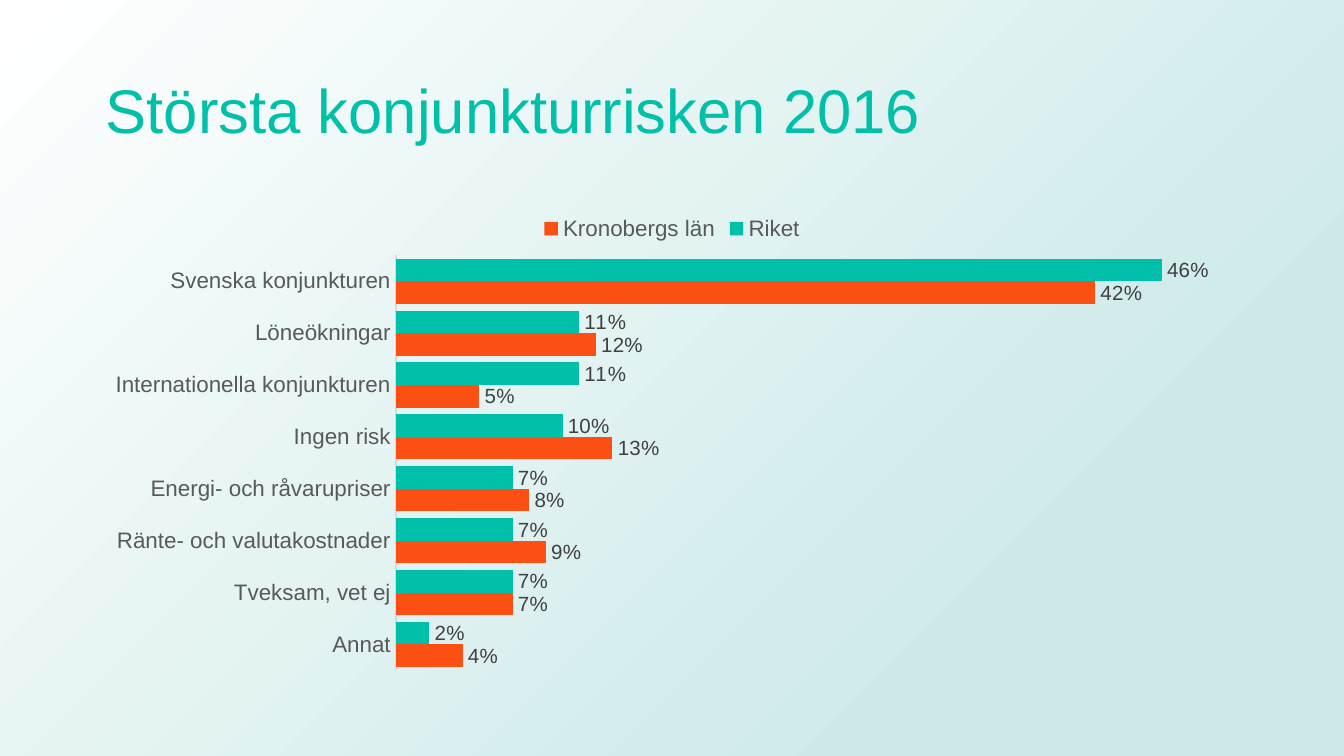
from pptx import Presentation
from pptx.chart.data import CategoryChartData
from pptx.dml.color import RGBColor
from pptx.enum.chart import XL_CHART_TYPE as Chart, XL_LABEL_POSITION as LabelPos
from pptx.enum.chart import XL_LEGEND_POSITION as LegendPos, XL_TICK_MARK as Tick
from pptx.enum.shapes import MSO_SHAPE as Shape
from pptx.enum.text import MSO_ANCHOR as Anchor, MSO_AUTO_SIZE as AutoSize, PP_ALIGN as Align
from pptx.oxml import parse_xml
from pptx.util import Inches, Pt

THEME = {
    "font": "Arial",
    "teal": "00C0A9", "orange": "FB4F14", "axis_text": "595959",
    "label_text": "404040", "axis_line": "D9D9D9",
    "glow": "CDEAE9", "paper": "FFFFFF",
    "title": 33, "axis": 12, "label": 11,
}
A_NS = "http://schemas.openxmlformats.org/drawingml/2006/main"

RISKS = [
    # category, Riket, Kronobergs län
    ("Svenska konjunkturen", 0.46, 0.42),
    ("Löneökningar", 0.11, 0.12),
    ("Internationella konjunkturen", 0.11, 0.05),
    ("Ingen risk", 0.10, 0.13),
    ("Energi- och råvarupriser", 0.07, 0.08),
    ("Ränte- och valutakostnader", 0.07, 0.09),
    ("Tveksam, vet ej", 0.07, 0.07),
    ("Annat", 0.02, 0.04),
]
SERIES = [("Riket", "teal"), ("Kronobergs län", "orange")]


def style_font(font, size, color):
    font.name = THEME["font"]
    font.size = Pt(THEME[size])
    font.color.rgb = RGBColor.from_string(THEME[color])


prs = Presentation()
W = Inches(10)
H = W * 9 // 16
prs.slide_width, prs.slide_height = W, H
left = W * 11 // 160
width = W - 2 * left
s = prs.slides.add_slide(prs.slide_layouts[5])

# Backdrop on the master: a glow that spreads from the bottom right corner
backdrop = s.shapes.add_shape(Shape.RECTANGLE, 0, 0, W, H)
backdrop.shadow.inherit = False
backdrop.line.fill.background()
backdrop.fill.background()
no_fill = backdrop._element.spPr.find(f"{{{A_NS}}}noFill")
no_fill.getparent().replace(no_fill, parse_xml(
    f'<a:gradFill xmlns:a="{A_NS}" rotWithShape="1"><a:gsLst>'
    f'<a:gs pos="23000"><a:srgbClr val="{THEME["glow"]}"/></a:gs>'
    f'<a:gs pos="100000"><a:srgbClr val="{THEME["paper"]}"/></a:gs></a:gsLst>'
    '<a:path path="circle"><a:fillToRect l="100000" t="100000"/></a:path></a:gradFill>'))
backdrop._element.nvSpPr.cNvPr.set("id", "20")  # free among the master's shapes
prs.slide_master.shapes._spTree.insert(2, backdrop._element)

# Title
title = s.shapes.title
title.left, title.top, title.width, title.height = left, Inches(0.3), width, Inches(1.09)
tf = title.text_frame
tf.text = "Största konjunkturrisken 2016"
tf.word_wrap = True
tf.auto_size = AutoSize.NONE
tf.vertical_anchor = Anchor.MIDDLE
p = tf.paragraphs[0]
p.alignment, p.line_spacing = Align.LEFT, 0.9
style_font(p.runs[0].font, "title", "teal")

# Chart
data = CategoryChartData(number_format="0%")
data.categories = [row[0] for row in RISKS]
for i, (name, _) in enumerate(SERIES, start=1):
    data.add_series(name, [row[i] for row in RISKS])
chart = s.shapes.add_chart(Chart.BAR_CLUSTERED, left, Inches(1.5), width, Inches(3.56), data).chart
chart.has_title = False
style_font(chart.font, "axis", "axis_text")

chart.has_legend = True
chart.legend.position = LegendPos.TOP
chart.legend.include_in_layout = False
style_font(chart.legend.font, "axis", "axis_text")

cat = chart.category_axis
cat.reverse_order = True
cat.major_tick_mark = cat.minor_tick_mark = Tick.NONE
cat.format.line.color.rgb = RGBColor.from_string(THEME["axis_line"])
cat.format.line.width = Pt(0.75)
style_font(cat.tick_labels.font, "axis", "axis_text")

val = chart.value_axis
val.visible = False
val.has_major_gridlines = False
val.minimum_scale, val.maximum_scale = 0, 0.5

plot = chart.plots[0]
plot.gap_width, plot.overlap = 30, 0
plot.vary_by_categories = False
for series, (_, color) in zip(plot.series, SERIES):
    series.format.fill.solid()
    series.format.fill.fore_color.rgb = RGBColor.from_string(THEME[color])
    labels = series.data_labels
    labels.show_value = True
    labels.number_format, labels.number_format_is_linked = "0%", False
    labels.position = LabelPos.OUTSIDE_END
    style_font(labels.font, "label", "label_text")

prs.save("out.pptx")
